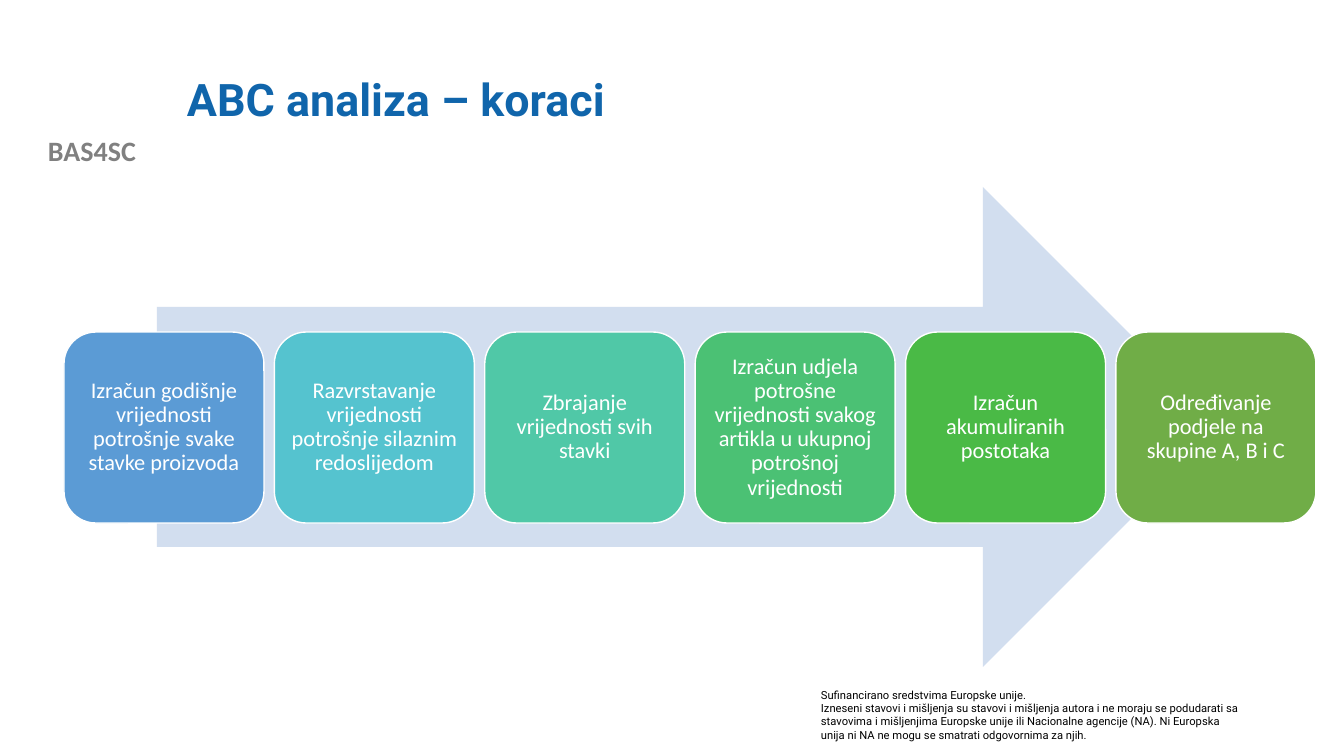
from dataclasses import dataclass

from pptx import Presentation
from pptx.dml.color import RGBColor
from pptx.enum.shapes import MSO_SHAPE
from pptx.enum.text import MSO_ANCHOR, PP_ALIGN
from pptx.util import Inches, Pt

ARROW, ROUNDED = MSO_SHAPE.RIGHT_ARROW, MSO_SHAPE.ROUNDED_RECTANGLE
TOP, MIDDLE = MSO_ANCHOR.TOP, MSO_ANCHOR.MIDDLE
LEFT, CENTER = PP_ALIGN.LEFT, PP_ALIGN.CENTER

TITLE = "ABC analiza – koraci"
PROJECT = "BAS4SC"
DISCLAIMER = [
    "Sufinancirano sredstvima Europske unije.",
    "Izneseni stavovi i mišljenja su stavovi i mišljenja autora i ne moraju se "
    "podudarati sa stavovima i mišljenjima Europske unije ili Nacionalne agencije "
    "(NA). Ni Europska unija ni NA ne mogu se smatrati odgovornima za njih.",
]
STEPS = [
    ("Izračun godišnje vrijednosti potrošnje svake stavke proizvoda", "5B9BD5"),
    ("Razvrstavanje vrijednosti potrošnje silaznim redoslijedom", "55C3CF"),
    ("Zbrajanje vrijednosti svih stavki", "50C8A7"),
    ("Izračun udjela potrošne vrijednosti svakog artikla u ukupnoj potrošnoj "
     "vrijednosti", "4BC174"),
    ("Izračun akumuliranih postotaka", "4ABA46"),
    ("Određivanje podjele na skupine A, B i C", "70AD47"),
]


@dataclass(frozen=True)
class Style:
    font: str
    size: int
    color: str
    bold: bool = False
    align: PP_ALIGN = LEFT
    spacing: float = 1.0


@dataclass(frozen=True)
class Theme:
    arrow: str = "D2DEEF"
    outline: str = "FFFFFF"
    title: Style = Style("Roboto", 32, "1065AB", bold=True, spacing=0.9)
    project: Style = Style("Calibri", 20, "808080", bold=True, align=CENTER)
    disclaimer: Style = Style("Roboto", 8, "000000")
    step: Style = Style("Calibri", 16, "FFFFFF", align=CENTER, spacing=0.9)


THEME = Theme()

# All lengths below are px
SLIDE_WIDTH, SLIDE_HEIGHT = 1344, 756
PX = Inches(7.5) / SLIDE_HEIGHT
ROW_LEFT, ROW_RIGHT, ROW_TOP = 64, 1316, 332
STEP_WIDTH, STEP_HEIGHT, STEP_INSET = 200, 191, 7


def emu(*lengths):
    return [round(length * PX) for length in lengths]


def write(frame, lines, style, anchor=TOP):
    frame.word_wrap = True
    frame.vertical_anchor = anchor
    for index, line in enumerate(lines):
        para = frame.add_paragraph() if index else frame.paragraphs[0]
        para.text = line
        para.alignment = style.align
        para.line_spacing = style.spacing
        para.font.name = style.font
        para.font.size = Pt(style.size)
        para.font.bold = style.bold
        para.font.color.rgb = RGBColor.from_string(style.color)


def add_text(page, area, lines, style, anchor=TOP):
    box = page.shapes.add_textbox(*emu(*area))
    write(box.text_frame, lines, style, anchor)


def add_filled(page, kind, area, fill):
    shape = page.shapes.add_shape(kind, *emu(*area))
    shape.shadow.inherit = False
    shape.fill.solid()
    shape.fill.fore_color.rgb = RGBColor.from_string(fill)
    shape.line.fill.background()
    return shape


def add_steps(page):
    pitch = (ROW_RIGHT - ROW_LEFT - STEP_WIDTH) / (len(STEPS) - 1)
    for index, (label, fill) in enumerate(STEPS):
        area = (ROW_LEFT + index * pitch, ROW_TOP, STEP_WIDTH, STEP_HEIGHT)
        step = add_filled(page, ROUNDED, area, fill)
        step.line.color.rgb = RGBColor.from_string(THEME.outline)
        step.line.width = Pt(1)
        frame = step.text_frame
        (inset,) = emu(STEP_INSET)
        frame.margin_left = frame.margin_right = inset
        frame.margin_top = frame.margin_bottom = inset
        write(frame, [label], THEME.step, MIDDLE)


def main():
    deck = Presentation()
    deck.slide_width, deck.slide_height = emu(SLIDE_WIDTH, SLIDE_HEIGHT)
    page = deck.slides.add_slide(deck.slide_layouts[6])
    add_text(page, (0, 129, 184, 44), [PROJECT], THEME.project)
    add_text(page, (811, 683, 440, 65), DISCLAIMER, THEME.disclaimer)
    add_text(page, (177, 40, 1075, 123), [TITLE], THEME.title, MIDDLE)
    add_filled(page, ARROW, (157, 187, 1066, 480), THEME.arrow)
    add_steps(page)
    deck.save("out.pptx")


if __name__ == "__main__":
    main()
